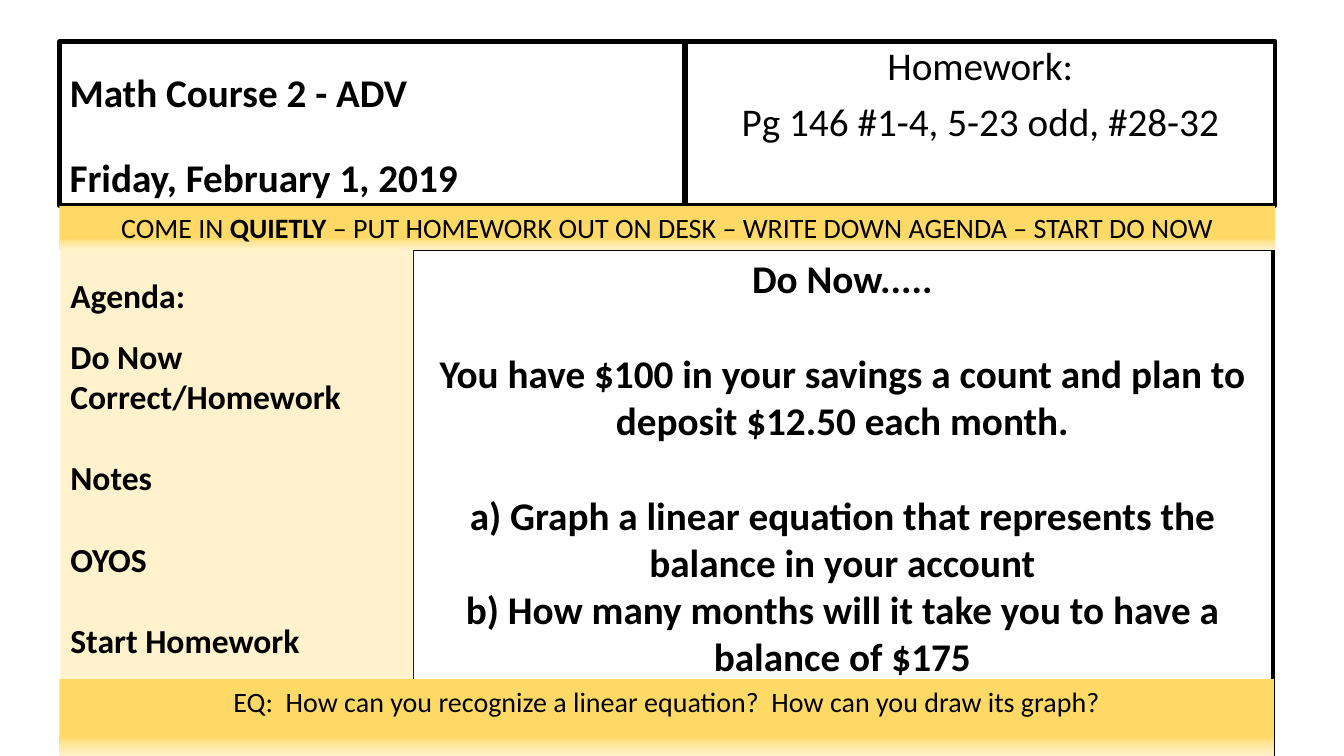
from pptx import Presentation
from pptx import util as u
from pptx.dml.color import RGBColor
from pptx.enum import shapes, text
from pptx.oxml import parse_xml
from pptx.oxml.ns import nsdecls, qn

LEFT, CENTER = text.PP_ALIGN.LEFT, text.PP_ALIGN.CENTER
TOP, BOTTOM = text.MSO_ANCHOR.TOP, text.MSO_ANCHOR.BOTTOM


def color(hex_code):
    return RGBColor.from_string(hex_code)


class AgendaPage:
    """Holds the style and the current slide; lengths are in points."""

    font, ink, cream = "Calibri", "000000", "FFF2CC"
    border = 3.25
    band_stops = [(0, "FFD966"), (74, "FFD966"), (83, "FFE699"), (100, "FFF2CC")]

    def __init__(self, deck):
        self.page = deck.slides.add_slide(deck.slide_layouts[5])

    def outline(self, box):
        box.line.color.rgb = color(self.ink)
        box.line.width = u.Pt(self.border)

    def fill_text(self, box, lines, size, align, bold=False, anchor=TOP):
        """Each line is (text, space before, line spacing); ** toggles bold."""
        frame = box.text_frame
        frame.word_wrap = True
        frame.auto_size = text.MSO_AUTO_SIZE.NONE
        frame.vertical_anchor = anchor
        for index, (words, before, spacing) in enumerate(lines):
            para = frame.paragraphs[0] if index == 0 else frame.add_paragraph()
            para.alignment = align
            para.space_before = u.Pt(before)
            para.line_spacing = spacing
            for part, piece in enumerate(words.split("**")):
                span = para.add_run()
                span.text = piece
                span.font.name = self.font
                span.font.size = u.Pt(size)
                span.font.bold = bold or part % 2 == 1
                span.font.color.rgb = color(self.ink)

    def title(self, area, lines, size):
        box = self.page.shapes.title
        box.left, box.top, box.width, box.height = map(u.Pt, area)
        self.outline(box)
        self.fill_text(box, lines, size, LEFT, bold=True, anchor=BOTTOM)

    def panel(self, area, lines, size, align=CENTER, bold=False, fill=None):
        """Rectangle with a flat fill, or with a border when there is none."""
        box = self.page.shapes.add_shape(
            shapes.MSO_SHAPE.RECTANGLE, *map(u.Pt, area))
        box.shadow.inherit = False
        if fill:
            box.fill.solid()
            box.fill.fore_color.rgb = color(fill)
            box.line.fill.background()
        else:
            box.fill.background()
            self.outline(box)
        self.fill_text(box, lines, size, align, bold)
        return box

    def band(self, area, words, size=20):
        box = self.panel(area, [(words, 0, 1.0)], size, fill=self.cream)
        box.fill.gradient()
        box.fill.gradient_angle = 270
        stop_list = next(box.element.iter(qn("a:gsLst")))
        for stop in list(stop_list):
            stop_list.remove(stop)
        for position, hex_code in self.band_stops:
            stop_list.append(parse_xml(
                f'<a:gs {nsdecls("a")} pos="{position * 1000}">'
                f'<a:srgbClr val="{hex_code}"/></a:gs>'))


def main():
    deck = Presentation()
    deck.slide_width, deck.slide_height = u.Pt(960), u.Pt(540)
    sheet = AgendaPage(deck)
    left, top, header_height = 42.5, 29.5, 117.4

    # Header: course and date, homework
    sheet.title((left, top, 446.4, header_height), [
        ("Math Course 2 - ADV", 0, 0.9),
        ("Friday, February 1, 2019", 30, 0.9),
    ], 28)
    sheet.panel((489.6, top, 421.2, header_height), [
        ("Homework:", 10, 0.9),
        ("Pg 146 #1-4, 5-23 odd, #28-32", 10, 0.9),
    ], 28)

    # Do Now problem
    gap = 34.2
    sheet.panel((293.8, 177.8, 615.6, 516.2), [
        ("Do Now.....", 0, 1.0),
        ("You have $100 in your savings a count and plan to "
         "deposit $12.50 each month.", gap, 1.0),
        ("a) Graph a linear equation that represents the "
         "balance in your account", gap, 1.0),
        ("b) How many months will it take you to have a "
         "balance of $175", 0, 1.0),
    ], 28, bold=True)

    # Instructions band
    sheet.band((left, 146.9, 868.3, 31.7),
               "COME IN **QUIETLY** – PUT HOMEWORK OUT ON DESK – "
               "WRITE DOWN AGENDA – START DO NOW")

    # Agenda
    gap = 29.3
    sheet.panel((43.2, 178.6, 252, 366.5), [
        ("Agenda:", 0, 1.5),
        ("Do Now", 0, 1.5),
        ("Correct/Homework", 0, 1.0),
        ("Notes", gap, 1.0),
        ("OYOS", gap, 1.0),
        ("Start Homework", gap, 1.0),
    ], 24, LEFT, bold=True, fill=sheet.cream)

    # Essential question band
    sheet.band((left, 485.3, 867.6, 55.4),
               "EQ:  How can you recognize a linear equation?  "
               "How can you draw its graph?")

    deck.save("out.pptx")


if __name__ == "__main__":
    main()
